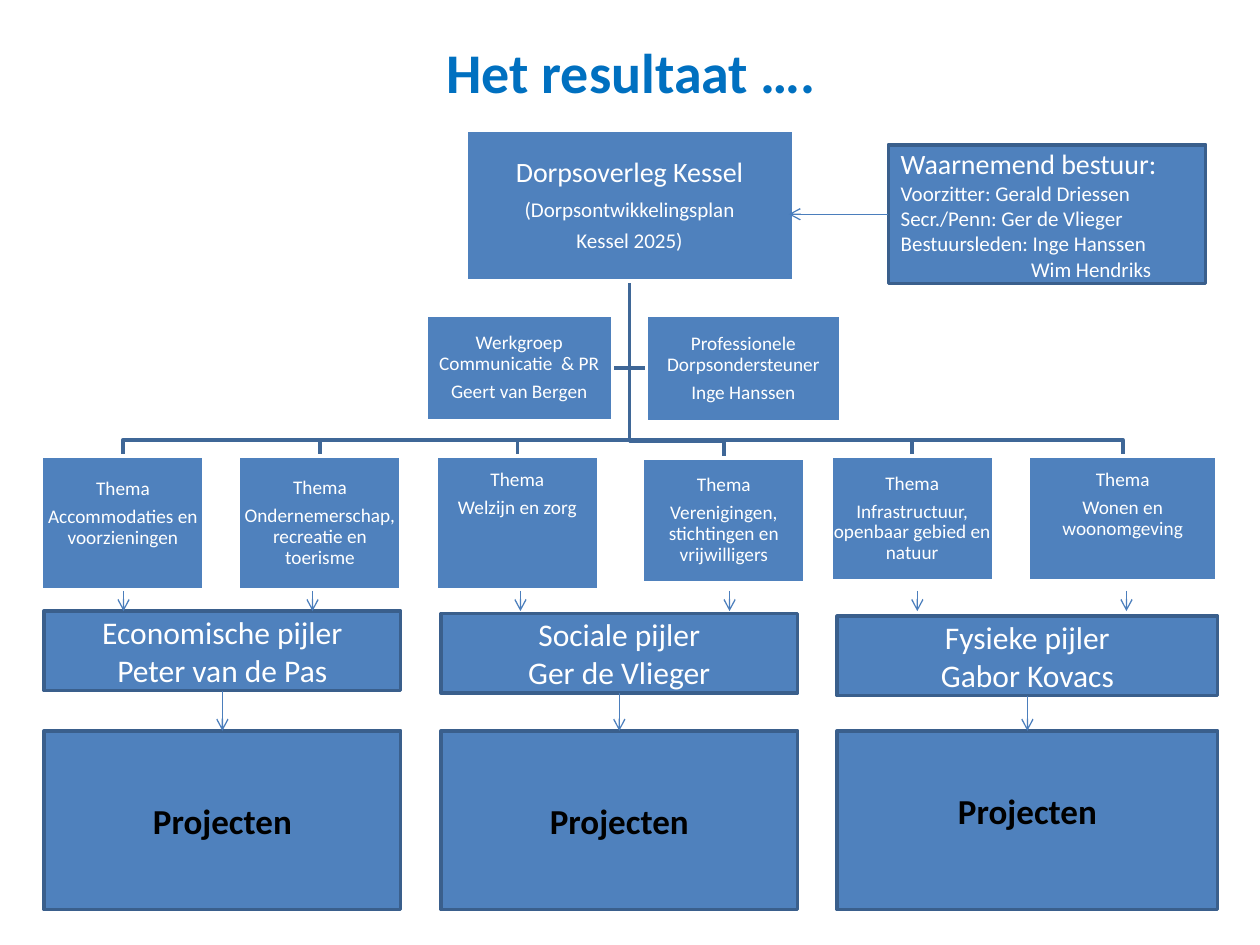
from pptx import Presentation
from pptx.dml.color import RGBColor
from pptx.enum.shapes import MSO_CONNECTOR, MSO_SHAPE
from pptx.enum.text import MSO_ANCHOR as ANCHOR, PP_ALIGN as ALIGN
from pptx.oxml.ns import qn
from pptx.util import Pt
from lxml.etree import SubElement

COLORS = {"title": "0070C0", "box": "4F81BD", "white": "FFFFFF", "black": "000000",
          "border": "3A5F8C", "branch": "3F6797", "arrow": "4B7EBC"}
FONT = "Calibri"
TOP, LEFT, BOTTOM = 0, 1, 2  # connection sites of a rectangle


def color(name):
    return RGBColor.from_string(COLORS[name])


def write(shape, lines, size, ink="white", bold=False, align=ALIGN.CENTER, compact=False):
    """Fill a shape with paragraphs; a line is a text or a (text, size) pair."""
    frame = shape.text_frame
    frame.word_wrap = True
    frame.vertical_anchor = ANCHOR.MIDDLE
    for index, line in enumerate(lines):
        text, points = line if isinstance(line, tuple) else (line, size)
        paragraph = frame.paragraphs[0] if index == 0 else frame.add_paragraph()
        paragraph.alignment = align
        if compact:
            paragraph.line_spacing = 0.9
            paragraph.space_after = Pt(round(0.38 * points, 1))
        run = paragraph.add_run()
        run.text = text
        run.font.color.rgb = color(ink)
        for name, value in {"name": FONT, "size": Pt(points), "bold": bold}.items():
            setattr(run.font, name, value)
    return frame


def add_box(slide, box, border="border"):
    shape = slide.shapes.add_shape(MSO_SHAPE.RECTANGLE, *map(Pt, box))
    shape.shadow.inherit = False
    shape.fill.solid()
    shape.fill.fore_color.rgb = color("box")
    shape.line.color.rgb = color(border)
    shape.line.width = Pt(2)
    return shape


def add_node(slide, box, lines, size=11, text_top=None):
    """White-edged chart node; text_top hangs the text from the top edge."""
    shape = add_box(slide, box, "white")
    frame = write(shape, lines, size, compact=True)
    for side in ("left", "right", "top", "bottom"):
        setattr(frame, f"margin_{side}", Pt(0.72))
    if text_top is not None:
        frame.vertical_anchor = ANCHOR.TOP
        frame.margin_top = Pt(text_top)


def add_arrow(slide, start, end):
    arrow = slide.shapes.add_connector(MSO_CONNECTOR.STRAIGHT, *map(Pt, start + end))
    arrow.line.color.rgb = color("arrow")
    arrow.line.width = Pt(0.75)
    SubElement(arrow.line._get_or_add_ln(), qn("a:tailEnd"), type="arrow")
    SubElement(arrow._element.spPr, qn("a:effectLst"))
    return arrow


def add_branch(slide, points):
    builder = slide.shapes.build_freeform(*map(Pt, points[0]))
    builder.add_line_segments([tuple(map(Pt, point)) for point in points[1:]], close=False)
    branch = builder.convert_to_shape()
    branch.shadow.inherit = False
    branch.fill.background()
    branch.line.color.rgb = color("branch")
    branch.line.width = Pt(2)


def add_title(slide, box):
    title = slide.shapes.add_textbox(*map(Pt, box))
    write(title, ["Het resultaat …."], 32, ink="title", bold=True)


def add_organisation(slide, box):
    """Village council, its two supporting nodes and the six themes."""
    left, top, width, height = box
    root_x, root_bottom = left + 336, top + 86.4
    root_width, theme_width = 187.2, 92.9
    theme_top = top + 186.5
    # left offset, top offset, width, height, text top, theme
    themes = [
        (0, 0, theme_width, 76.3, 12.8, "Accommodaties en voorzieningen"),
        (112.6, 0, theme_width, 76.3, None, "Ondernemerschap, recreatie en toerisme"),
        (225.4, 0, theme_width, 76.3, 7.7, "Welzijn en zorg"),
        (343.4, 1, theme_width, 71.3, None, "Verenigingen, stichtingen en vrijwilligers"),
        (451, 0, theme_width, 71.3, None, "Infrastructuur, openbaar gebied en natuur"),
        (563.8, 0, 108, 71.3, 7.7, "Wonen en woonomgeving"),
    ]
    supports = [
        ((left + 219.6, top + 105.8, 106.6, 60.5),
         ["Werkgroep Communicatie  & PR", "Geert van Bergen"]),
        ((left + 345.6, top + 105.8, 110.9, 61.2),
         ["Professionele Dorpsondersteuner", "Inge Hanssen"]),
    ]
    # Branches go down from the root, along, and down to each theme
    root = (root_x, root_bottom)
    side_y = top + 136.1
    for side_x in (left + 326.2, left + 345.6):
        add_branch(slide, [root, (root_x, side_y), (side_x, side_y)])
    for dx, dy, node_width, *_ in themes:
        x, y = left + dx + node_width / 2, theme_top + dy
        add_branch(slide, [root, (root_x, y - 9.4), (x, y - 9.4), (x, y)])
    # Nodes
    add_node(slide, (root_x - root_width / 2, top, root_width, 86.4),
             [("Dorpsoverleg Kessel", 16), "(Dorpsontwikkelingsplan", "Kessel 2025)"], 12)
    for node_box, lines in supports:
        add_node(slide, node_box, lines)
    for dx, dy, node_width, node_height, text_top, theme in themes:
        add_node(slide, (left + dx, theme_top + dy, node_width, node_height),
                 ["Thema", theme], text_top=text_top)


def add_pillar(slide, box, lines, arrow_offsets, raise_label=0):
    """Pillar heading with theme arrows above and its projects below."""
    left, top, width, height = box
    projects_top, arrow_top, arrow_bottom = 417.6, 337.7, 349.2
    pillar = add_box(slide, (left, top, width, 45.4))
    write(pillar, lines, 18)
    projects = add_box(slide, (left, projects_top, width, top + height - projects_top))
    frame = write(projects, ["Projecten"], 20, ink="black", bold=True)
    frame.margin_bottom = Pt(3.6 + 2 * raise_label)
    for offset in arrow_offsets:
        x = left + offset
        add_arrow(slide, (x, arrow_top), (x, arrow_bottom))
    middle = left + width / 2
    arrow = add_arrow(slide, (middle, top + 45.4), (middle, projects_top))
    arrow.begin_connect(pillar, BOTTOM)
    arrow.end_connect(projects, TOP)


def add_board(slide, box, arrow_end):
    """Acting board with an arrow to the council."""
    left, top, width, height = box
    board = add_box(slide, box)
    frame = write(board, [("Waarnemend bestuur:", 16), "Voorzitter: Gerald Driessen",
                          "Secr./Penn: Ger de Vlieger", "Bestuursleden: Inge Hanssen",
                          "Wim Hendriks"], 12, align=ALIGN.LEFT)
    # The last name lines up under the board members
    frame.paragraphs[-1]._p.get_or_add_pPr().set("marL", str(Pt(74.5)))
    middle = top + height / 2
    add_arrow(slide, (left, middle), (arrow_end, middle)).begin_connect(board, LEFT)


def main():
    presentation = Presentation()
    presentation.slide_width, presentation.slide_height = Pt(720), Pt(540)
    slide = presentation.slides.add_slide(presentation.slide_layouts[6])
    add_title(slide, (36.7, 15.1, 648, 51.1))
    add_organisation(slide, (23.8, 74.2, 671.8, 262.8))
    bottom = 519.8
    pillars = [
        ((25.2, 349.2, 203.8), ["Economische pijler", "Peter van de Pas"], (45.4, 153.4), 0),
        ((252, 350.6, 203.8), ["Sociale pijler", "Ger de Vlieger"], (45.4, 164.9), 0),
        ((478.4, 352.1, 217.4), ["Fysieke pijler", "Gabor Kovacs"], (45.8, 165.3), 5.7),
    ]
    for (left, top, width), lines, offsets, raise_label in pillars:
        add_pillar(slide, (left, top, width, bottom - top), lines, offsets, raise_label)
    add_board(slide, (507.6, 82.8, 181.4, 79.2), 450.7)
    presentation.save("out.pptx")


if __name__ == "__main__":
    main()
